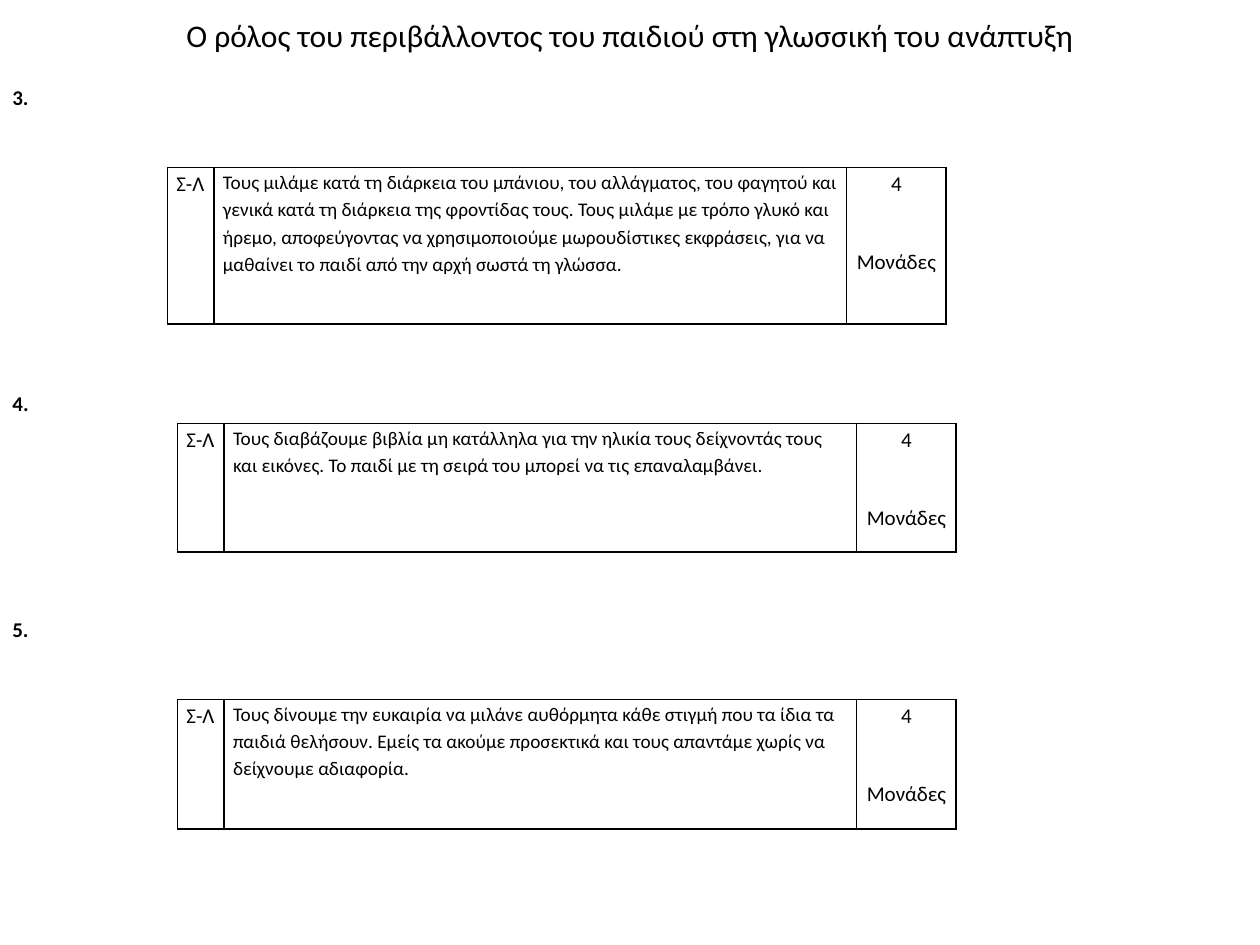
from pptx import Presentation
from pptx.dml.color import RGBColor
from pptx.enum.text import MSO_ANCHOR, PP_ALIGN
from pptx.oxml import parse_xml
from pptx.oxml.ns import nsdecls
from pptx.util import Inches, Pt

THEME = {
    "font": "Calibri", "ink": "000000", "paper": "FFFFFF",
    "title": 18, "label": 12, "statement": 11, "border": 1,
}
TITLE = "Ο ρόλος του περιβάλλοντος του παιδιού στη γλωσσική του ανάπτυξη"
CHOICE = "Σ-Λ"
MARKS = ["4", "Μονάδες"]
COLUMNS = [0.37, 5.02, 0.79]
LABEL_HEIGHT = 0.3
QUESTIONS = [
    {"number": "3.", "label_top": 0.62, "label_width": 9, "table": (1.33, 1.33), "height": 1.24,
     "statement": "Τους μιλάμε κατά τη διάρκεια του μπάνιου, του αλλάγματος, του φαγητού "
                  "και γενικά κατά τη διάρκεια της φροντίδας τους. Τους μιλάμε με τρόπο γλυκό "
                  "και ήρεμο, αποφεύγοντας να χρησιμοποιούμε μωρουδίστικες εκφράσεις, για "
                  "να μαθαίνει το παιδί από την αρχή σωστά τη γλώσσα."},
    {"number": "4.", "label_top": 3.05, "label_width": 8.75, "table": (1.41, 3.36), "height": 1.02,
     "statement": "Τους διαβάζουμε βιβλία μη κατάλληλα για την ηλικία τους δείχνοντάς τους "
                  "και εικόνες. Το παιδί με τη σειρά του μπορεί να τις επαναλαμβάνει."},
    {"number": "5.", "label_top": 4.84, "label_width": 8.44, "table": (1.41, 5.55), "height": 1.03,
     "statement": "Τους δίνουμε την ευκαιρία να μιλάνε αυθόρμητα κάθε στιγμή που τα ίδια τα "
                  "παιδιά θελήσουν. Εμείς τα ακούμε προσεκτικά και τους απαντάμε χωρίς να "
                  "δείχνουμε αδιαφορία."},
]


def style_runs(p, size, bold=False):
    for r in p.runs:
        r.font.name = THEME["font"]
        r.font.size = Pt(size)
        r.font.bold = bold
        r.font.color.rgb = RGBColor.from_string(THEME["ink"])


def add_text(slide, text, box, size, bold=False, align=PP_ALIGN.LEFT):
    sp = slide.shapes.add_textbox(*map(Inches, box))
    tf = sp.text_frame
    tf.word_wrap = True
    tf.vertical_anchor = MSO_ANCHOR.MIDDLE
    tf.text = text
    p = tf.paragraphs[0]
    p.alignment = align
    style_runs(p, size, bold)
    return sp


def add_borders(cell):
    props = cell._tc.get_or_add_tcPr()
    for i, side in enumerate(("lnL", "lnR", "lnT", "lnB")):
        props.insert(i, parse_xml(
            f'<a:{side} {nsdecls("a")} w="{Pt(THEME["border"])}"><a:solidFill>'
            f'<a:srgbClr val="{THEME["ink"]}"/></a:solidFill></a:{side}>'))


def fill_cell(cell, lines, size, align):
    cell.fill.background()
    cell.margin_left = cell.margin_right = Inches(0.07)
    cell.margin_top = cell.margin_bottom = 0
    tf = cell.text_frame
    tf.text = "\n".join(lines)
    for i, p in enumerate(tf.paragraphs):
        p.alignment = align
        p.line_spacing = 1.15
        p.space_before = Pt(14.4 if i else 0)
        p.space_after = Pt(13.4)
        style_runs(p, size)
    add_borders(cell)


def add_question(slide, q):
    label = add_text(slide, q["number"], (0, q["label_top"], q["label_width"], LABEL_HEIGHT),
                     THEME["label"], bold=True)
    label.fill.solid()
    label.fill.fore_color.rgb = RGBColor.from_string(THEME["paper"])

    size = (sum(COLUMNS), q["height"])
    table = slide.shapes.add_table(1, len(COLUMNS), *map(Inches, q["table"] + size)).table
    table.first_row = table.horz_banding = False
    table.rows[0].height = Inches(q["height"])
    for column, width in zip(table.columns, COLUMNS):
        column.width = Inches(width)
    contents = [
        ([CHOICE], THEME["label"], PP_ALIGN.LEFT),
        ([q["statement"]], THEME["statement"], PP_ALIGN.LEFT),
        (MARKS, THEME["label"], PP_ALIGN.CENTER),
    ]
    for cell, content in zip(table.rows[0].cells, contents):
        fill_cell(cell, *content)


def main():
    prs = Presentation()
    prs.slide_width, prs.slide_height = Inches(10), Inches(7.5)
    slide = prs.slides.add_slide(prs.slide_layouts[6])
    add_text(slide, TITLE, (0.5, 0, 9, 0.56), THEME["title"], align=PP_ALIGN.CENTER)
    for q in QUESTIONS:
        add_question(slide, q)
    prs.save("out.pptx")


if __name__ == "__main__":
    main()
